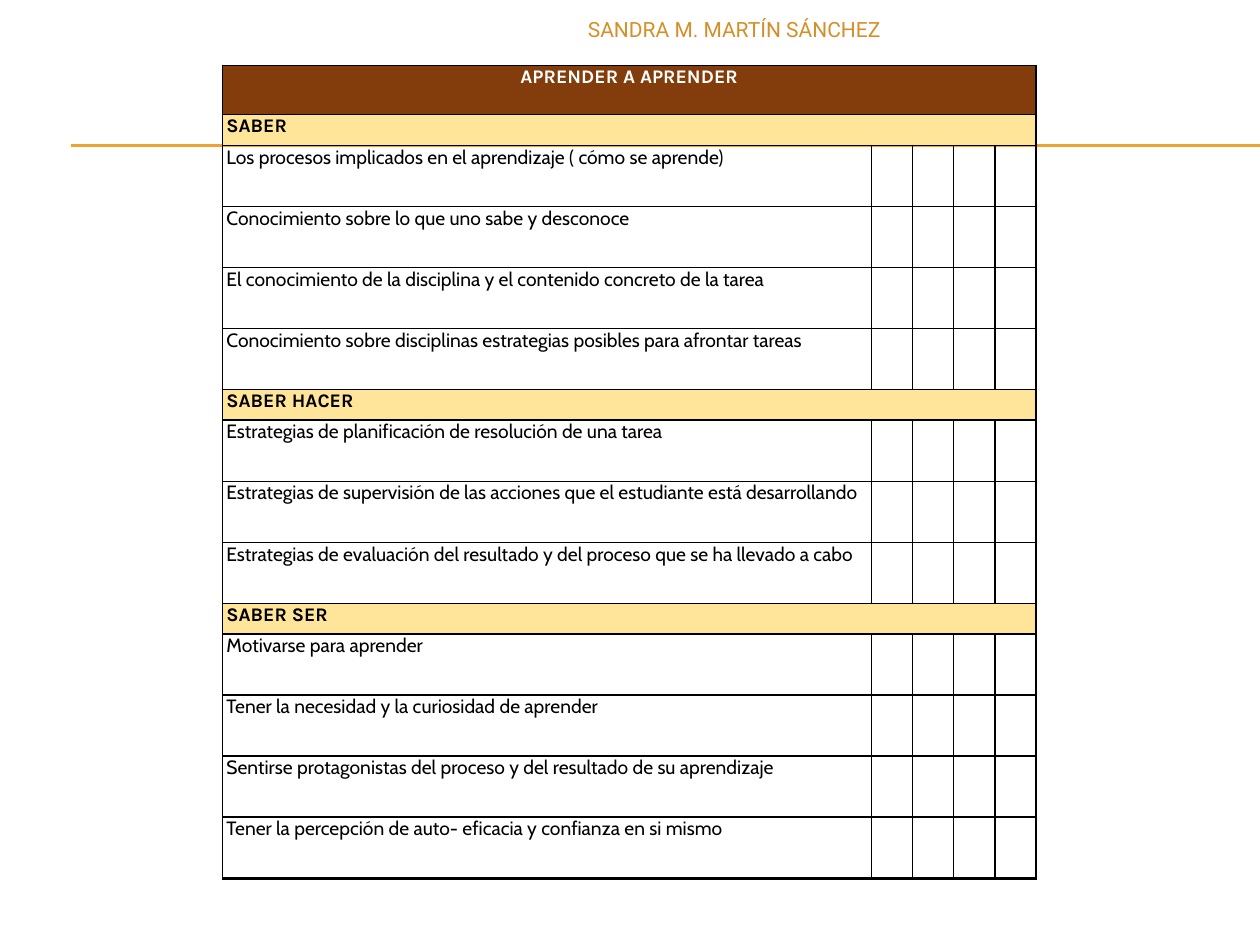
"""Build the "Aprender a aprender" assessment grid slide."""
from lxml.etree import SubElement
from pptx import Presentation
from pptx.dml.color import RGBColor
from pptx.enum.shapes import MSO_CONNECTOR
from pptx.enum.text import MSO_ANCHOR, PP_ALIGN
from pptx.oxml.ns import qn
from pptx.util import Pt

BLACK = RGBColor(0x00, 0x00, 0x00)
WHITE = RGBColor(0xFF, 0xFF, 0xFF)
BROWN = RGBColor(0x83, 0x3C, 0x0B)
CREAM = RGBColor(0xFF, 0xE5, 0x99)
AMBER = RGBColor(0xF0, 0xA2, 0x2E)
OCHRE = RGBColor(0xD4, 0x8F, 0x29)

SLIDE_WIDTH, SLIDE_HEIGHT = 720, 540
TABLE_LEFT, TABLE_TOP = 127.2, 37.4
COLUMN_WIDTHS = [370.8] + [23.5] * 4
TITLE_HEIGHT, SECTION_HEIGHT, CRITERION_HEIGHT = 28.2, 17.5, 34.9

TITLE = "APRENDER A APRENDER"
SECTIONS = {
    "SABER": [
        "Los procesos implicados en el aprendizaje ( cómo se aprende)",
        "Conocimiento sobre lo que uno sabe y desconoce",
        "El conocimiento de la disciplina y el contenido concreto de la tarea",
        "Conocimiento sobre disciplinas estrategias posibles para afrontar tareas",
    ],
    "SABER HACER": [
        "Estrategias de planificación de resolución de una tarea",
        "Estrategias de supervisión de las acciones que el estudiante está desarrollando",
        "Estrategias de evaluación del resultado y del proceso que se ha llevado a cabo",
    ],
    "SABER SER": [
        "Motivarse para aprender",
        "Tener la necesidad y la curiosidad de aprender",
        "Sentirse protagonistas del proceso y del resultado de su aprendizaje",
        "Tener la percepción de auto- eficacia y confianza en si mismo",
    ],
}


def style_font(font, name, size, color, bold=False):
    """Set the face, size, colour and weight of a font."""
    font.name, font.size, font.bold = name, Pt(size), bold
    font.color.rgb = color


def add_rule(slide, y):
    """Draw a thin amber line from the left margin to the slide edge."""
    rule = slide.shapes.add_connector(
        MSO_CONNECTOR.STRAIGHT, Pt(40.4), Pt(y), Pt(SLIDE_WIDTH), Pt(y))
    rule.line.color.rgb = AMBER
    rule.line.width = Pt(0.75)
    SubElement(rule._element.spPr, qn("a:effectLst"))


def add_author(slide, author):
    """Write the author's name above the table."""
    box = slide.shapes.add_textbox(Pt(282.2), Pt(5.8), Pt(228.2), Pt(23))
    frame = box.text_frame
    frame.word_wrap = True
    frame.text = author
    paragraph = frame.paragraphs[0]
    paragraph.alignment = PP_ALIGN.RIGHT
    style_font(paragraph.runs[0].font, "Roboto", 12, OCHRE)


def set_borders(cell, bottom_width):
    """Outline a cell in black with the given bottom width."""
    properties = cell._tc.get_or_add_tcPr()
    widths = {"a:lnL": 1, "a:lnR": 1, "a:lnT": 1, "a:lnB": bottom_width}
    for side, width in widths.items():
        border = SubElement(properties, qn(side), w=str(Pt(width)))
        fill = SubElement(border, qn("a:solidFill"))
        SubElement(fill, qn("a:srgbClr"), val=str(BLACK))


def format_cell(cell, fill, bottom_width):
    """Set the borders, fill, margins and anchor of a cell."""
    set_borders(cell, bottom_width)
    if fill is None:
        cell.fill.background()
    else:
        cell.fill.solid()
        cell.fill.fore_color.rgb = fill
    cell.margin_left = cell.margin_right = Pt(2.2)
    cell.margin_top = cell.margin_bottom = Pt(0)
    cell.vertical_anchor = MSO_ANCHOR.TOP


def write_cell(cell, text, face, color, bold, alignment):
    """Put one formatted paragraph in a cell."""
    cell.text_frame.text = text
    paragraph = cell.text_frame.paragraphs[0]
    paragraph.alignment = alignment
    paragraph.space_after = Pt(8)
    style_font(paragraph.runs[0].font, face, 11, color, bold)


def fill_row(table, index, text, height, fill=None, color=BLACK,
             alignment=PP_ALIGN.LEFT):
    """Fill one row, merging it across when it is a coloured heading."""
    heading = fill is not None
    bottom_width = 2.25 if index == len(table.rows) - 1 else 1
    table.rows[index].height = Pt(height)
    cells = list(table.rows[index].cells)
    for cell in cells:
        format_cell(cell, fill, bottom_width)
    if heading:
        cells[0].merge(cells[-1])
    write_cell(cells[0], text, "Karla" if heading else "Cabin", color, heading,
               alignment)


def add_competence_table(slide):
    """Build the table of sections, criteria and empty score columns."""
    criteria_count = sum(len(criteria) for criteria in SECTIONS.values())
    row_count = 1 + len(SECTIONS) + criteria_count
    height = (TITLE_HEIGHT + SECTION_HEIGHT * len(SECTIONS)
              + CRITERION_HEIGHT * criteria_count)
    table = slide.shapes.add_table(
        row_count, len(COLUMN_WIDTHS), Pt(TABLE_LEFT), Pt(TABLE_TOP),
        Pt(sum(COLUMN_WIDTHS)), Pt(height)).table
    table.first_row = table.horz_banding = False
    for column, width in zip(table.columns, COLUMN_WIDTHS):
        column.width = Pt(width)
    fill_row(table, 0, TITLE, TITLE_HEIGHT, BROWN, WHITE, PP_ALIGN.CENTER)
    index = 1
    for section, criteria in SECTIONS.items():
        fill_row(table, index, section, SECTION_HEIGHT, CREAM)
        for index, criterion in enumerate(criteria, index + 1):
            fill_row(table, index, criterion, CRITERION_HEIGHT)
        index += 1


def main():
    """Create the presentation and save it."""
    presentation = Presentation()
    presentation.slide_width = Pt(SLIDE_WIDTH)
    presentation.slide_height = Pt(SLIDE_HEIGHT)
    slide = presentation.slides.add_slide(presentation.slide_layouts[6])
    for y in (82.8, 83.5):
        add_rule(slide, y)
    add_competence_table(slide)
    add_author(slide, "SANDRA M. MARTÍN SÁNCHEZ")
    presentation.save("out.pptx")


if __name__ == "__main__":
    main()
